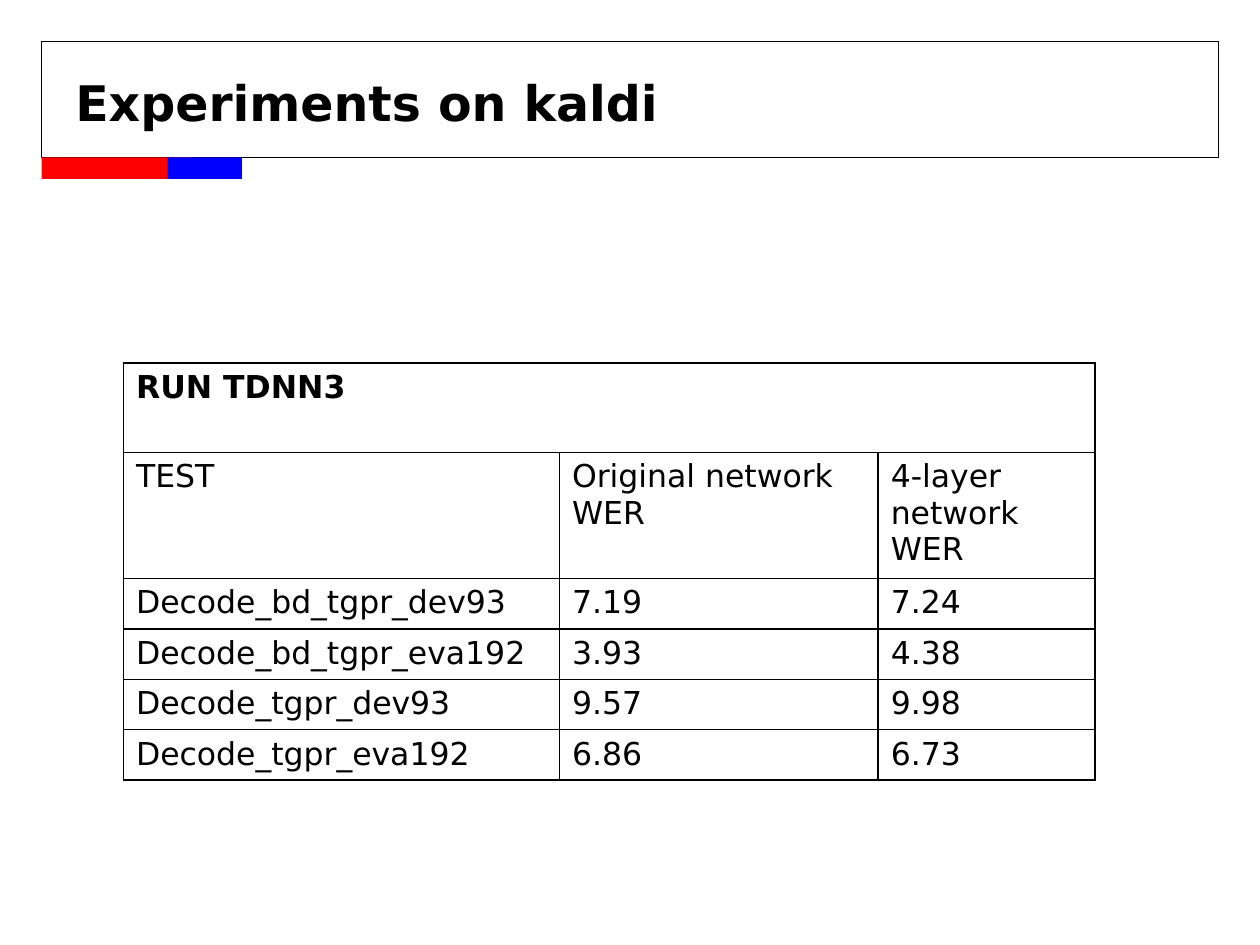
from lxml.etree import SubElement
from pptx import Presentation
from pptx.dml.color import RGBColor
from pptx.enum.shapes import MSO_SHAPE as SHAPE
from pptx.enum.text import MSO_ANCHOR as ANCHOR
from pptx.oxml.ns import qn
from pptx.util import Inches, Pt

FONT = "DejaVu Sans"
BLACK, WHITE, RED, BLUE = "000000", "FFFFFF", "FF0000", "0000FF"
MARGIN = 0.33
BAND_TOP, BAND_H = 1.25, 0.17
COLUMNS = [3.46, 2.53, 1.72]
ROWS = [0.71, 0.97] + [0.39] * 4
RESULTS = [
    ["RUN TDNN3", "", ""],
    ["TEST", "Original network WER", "4-layer network WER"],
    ["Decode_bd_tgpr_dev93", "7.19", "7.24"],
    ["Decode_bd_tgpr_eva192", "3.93", "4.38"],
    ["Decode_tgpr_dev93", "9.57", "9.98"],
    ["Decode_tgpr_eva192", "6.86", "6.73"],
]


def rgb(color):
    return RGBColor.from_string(color)


def write(tf, text, size, bold=False):
    p = tf.paragraphs[0]
    p.text = text
    p.font.name, p.font.size, p.font.bold = FONT, Pt(size), bold
    p.font.color.rgb = rgb(BLACK)


def add_rect(s, left, top, width, height, fill=None, line=None):
    sp = s.shapes.add_shape(SHAPE.RECTANGLE, *map(Inches, (left, top, width, height)))
    sp.shadow.inherit = False
    if fill:
        sp.fill.solid()
        sp.fill.fore_color.rgb = rgb(fill)
    else:
        sp.fill.background()
    if line:
        sp.line.color.rgb = rgb(line)
        sp.line.width = Pt(0.75)
    else:
        sp.line.fill.background()


def add_title(s, text):
    tf = s.shapes.add_textbox(*map(Inches, (0.5, 0.38, 9, 0.85))).text_frame
    tf.word_wrap = True
    tf.vertical_anchor = ANCHOR.MIDDLE
    write(tf, text, 28, bold=True)


def set_borders(cell):
    # Border lines must come before the fill in the cell properties
    tc_pr = cell._tc.get_or_add_tcPr()
    for side in ("a:lnL", "a:lnR", "a:lnT", "a:lnB"):
        ln = SubElement(tc_pr, qn(side), w=str(Pt(1)))
        fill = SubElement(ln, qn("a:solidFill"))
        SubElement(fill, qn("a:srgbClr"), val=BLACK)


def add_results(s, left, top):
    size = map(Inches, (left, top, sum(COLUMNS), sum(ROWS)))
    table = s.shapes.add_table(len(ROWS), len(COLUMNS), *size).table
    for column, width in zip(table.columns, COLUMNS):
        column.width = Inches(width)
    for row, height, texts in zip(table.rows, ROWS, RESULTS):
        row.height = Inches(height)
        for cell, text in zip(row.cells, texts):
            set_borders(cell)
            cell.fill.solid()
            cell.fill.fore_color.rgb = rgb(WHITE)
            write(cell.text_frame, text, 18, bold=texts is RESULTS[0])
    table.cell(0, 0).merge(table.cell(0, len(COLUMNS) - 1))


def main():
    prs = Presentation()
    prs.slide_width, prs.slide_height = Inches(10), Inches(7.5)
    s = prs.slides.add_slide(prs.slide_layouts[6])

    # Title frame with its two-colour band
    add_rect(s, MARGIN, MARGIN, 10 - 2 * MARGIN, BAND_TOP - MARGIN, line=BLACK)
    add_rect(s, MARGIN, BAND_TOP, 1.18, BAND_H, fill=RED)
    add_rect(s, MARGIN + 1, BAND_TOP, 0.59, BAND_H, fill=BLUE)
    add_title(s, "Experiments on kaldi")

    # Word error rates
    add_results(s, 0.98, 2.88)
    prs.save("out.pptx")


if __name__ == "__main__":
    main()
